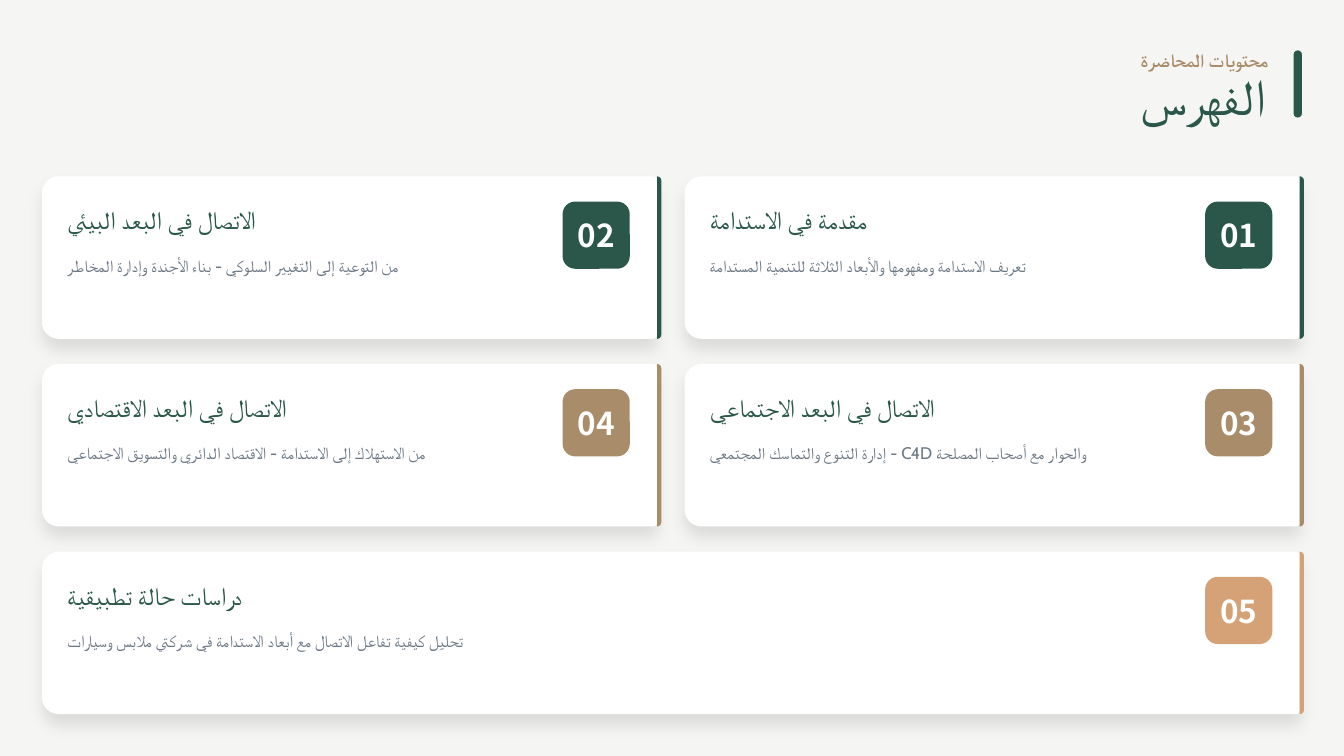
from dataclasses import dataclass
from math import cos, radians, sin

from lxml.etree import SubElement
from pptx import Presentation
from pptx.dml.color import RGBColor
from pptx.enum.shapes import MSO_SHAPE
from pptx.enum.text import MSO_ANCHOR, MSO_AUTO_SIZE, PP_ALIGN
from pptx.oxml.ns import qn
from pptx.util import Pt

GREEN, BROWN, SAND = "2A574A", "A98C6A", "D4A276"
WHITE, SLATE, PAPER = "FFFFFF", "2C3E50", "F5F5F3"
HEADING_FONT, BODY_FONT, NUMBER_FONT = "Noto Sans CJK JP", "Cabin", "Noto Sans CJK SC"

LEFT_COLUMN, RIGHT_COLUMN, TOP = 40, 652, 168
CARD_WIDTH, CARD_HEIGHT, ROW_GAP = 585.8, 154.7, 24
FULL_WIDTH = RIGHT_COLUMN + CARD_WIDTH - LEFT_COLUMN

# row, left edge, width, colour, number, heading, summary
CARDS = [
    (0, RIGHT_COLUMN, CARD_WIDTH, GREEN, "01", "مقدمة في الاستدامة",
     "تعريف الاستدامة ومفهومها والأبعاد الثلاثة للتنمية المستدامة"),
    (0, LEFT_COLUMN, CARD_WIDTH, GREEN, "02", "الاتصال في البعد البيئي",
     "من التوعية إلى التغيير السلوكي - بناء الأجندة وإدارة المخاطر"),
    (1, RIGHT_COLUMN, CARD_WIDTH, BROWN, "03", "الاتصال في البعد الاجتماعي",
     "إدارة التنوع والتماسك المجتمعي - C4D والحوار مع أصحاب المصلحة"),
    (1, LEFT_COLUMN, CARD_WIDTH, BROWN, "04", "الاتصال في البعد الاقتصادي",
     "من الاستهلاك إلى الاستدامة - الاقتصاد الدائري والتسويق الاجتماعي"),
    (2, LEFT_COLUMN, FULL_WIDTH, SAND, "05", "دراسات حالة تطبيقية",
     "تحليل كيفية تفاعل الاتصال مع أبعاد الاستدامة في شركتي ملابس وسيارات"),
]


def colour(value):
    return RGBColor.from_string(value)


def rounded_outline(left, top, width, height, radii, steps=8):
    """Corner points clockwise from the top left, one radius per corner."""
    points = []
    for corner, radius in enumerate(radii):
        at_right, at_bottom = corner in (1, 2), corner in (2, 3)
        x = left + (width - radius if at_right else radius)
        y = top + (height - radius if at_bottom else radius)
        for step in range(steps + 1 if radius else 1):
            angle = radians(180 + 90 * corner + 90 * step / steps)
            points.append((Pt(x + radius * cos(angle)), Pt(y + radius * sin(angle))))
    return points


@dataclass
class ContentsSlide:
    page: object

    def paint(self, shape, fill):
        shape.shadow.inherit = False
        shape.fill.solid()
        shape.fill.fore_color.rgb = colour(fill)
        shape.line.fill.background()

    def rounded_box(self, left, top, width, height, radius, fill):
        box = self.page.shapes.add_shape(
            MSO_SHAPE.ROUNDED_RECTANGLE, Pt(left), Pt(top), Pt(width), Pt(height))
        box.adjustments[0] = radius / min(width, height)
        self.paint(box, fill)

    def panel(self, left, top, width, height, radii, fill):
        """A filled box with its own radius at each corner."""
        start, *others = rounded_outline(left, top, width, height, radii)
        builder = self.page.shapes.build_freeform(*start)
        builder.add_line_segments(others, close=True)
        shape = builder.convert_to_shape()
        self.paint(shape, fill)
        return shape

    def drop_shadow(self, shape):
        effects = shape._element.spPr.find(qn("a:effectLst"))
        shadow = SubElement(effects, qn("a:outerShdw"), blurRad=str(Pt(15)),
                            dist=str(Pt(10)), dir="5400000", rotWithShape="0")
        black = SubElement(shadow, qn("a:srgbClr"), val="000000")
        SubElement(black, qn("a:alpha"), val="10000")

    def text(self, left, top, width, height, words, size, font, ink, spacing=1.0,
             bold=False, align=PP_ALIGN.LEFT, opacity=None, box=None):
        place = Pt(left), Pt(top), Pt(width), Pt(height)
        if box is None:
            box = self.page.shapes.add_textbox(*place)
        box.left, box.top, box.width, box.height = place
        frame = box.text_frame
        frame.word_wrap = True
        frame.auto_size = MSO_AUTO_SIZE.NONE
        frame.vertical_anchor = MSO_ANCHOR.MIDDLE
        frame.margin_left = frame.margin_right = 0
        frame.margin_top = frame.margin_bottom = 0
        para = frame.paragraphs[0]
        para.alignment = align
        para.line_spacing = spacing
        span = para.add_run()
        span.text = words
        span.font.size = Pt(size)
        span.font.bold = bold
        span.font.name = font
        span.font.color.rgb = colour(ink)
        properties = span.font._element
        for script in ("a:ea", "a:cs"):
            SubElement(properties, qn(script), typeface=font)
        if opacity is not None:
            tint = properties.find(".//" + qn("a:srgbClr"))
            SubElement(tint, qn("a:alpha"), val=str(opacity * 1000))

    def header(self):
        self.rounded_box(1232, 48, 8, 64, 4, GREEN)
        self.text(1086, 40, 140, 28, "محتويات المحاضرة", 18, BODY_FONT, BROWN,
                  spacing=1.3, bold=True)
        self.text(1086, 72, 155, 48, "الفهرس", 48, HEADING_FONT, GREEN,
                  spacing=0.8, box=self.page.shapes.title)

    def card(self, row, left, width, accent, number, heading, summary):
        top = TOP + row * (CARD_HEIGHT + ROW_GAP)
        right = left + width
        base = self.panel(left, top, width, CARD_HEIGHT, (16, 4, 4, 16), WHITE)
        self.drop_shadow(base)
        self.panel(right, top, 4, CARD_HEIGHT, (0, 4, 4, 0), accent)
        self.rounded_box(right - 90, top + 24, 64, 64, 12, accent)
        self.text(right - 97.5, top + 24, 79, 64, number, 30, NUMBER_FONT, WHITE,
                  bold=True, align=PP_ALIGN.CENTER)
        self.text(left + 24, top + 24, width - 118, 32, heading, 24,
                  HEADING_FONT, GREEN, spacing=1.1)
        self.text(left + 24, top + 68, width - 122, 26, summary, 16,
                  BODY_FONT, SLATE, spacing=1.4, opacity=70)


def main():
    deck = Presentation()
    deck.slide_width, deck.slide_height = Pt(1280), Pt(720)
    page = deck.slides.add_slide(deck.slide_layouts[5])
    page.background.fill.solid()
    page.background.fill.fore_color.rgb = colour(PAPER)
    contents = ContentsSlide(page)
    contents.header()
    for card in CARDS:
        contents.card(*card)
    deck.save("out.pptx")


if __name__ == "__main__":
    main()
